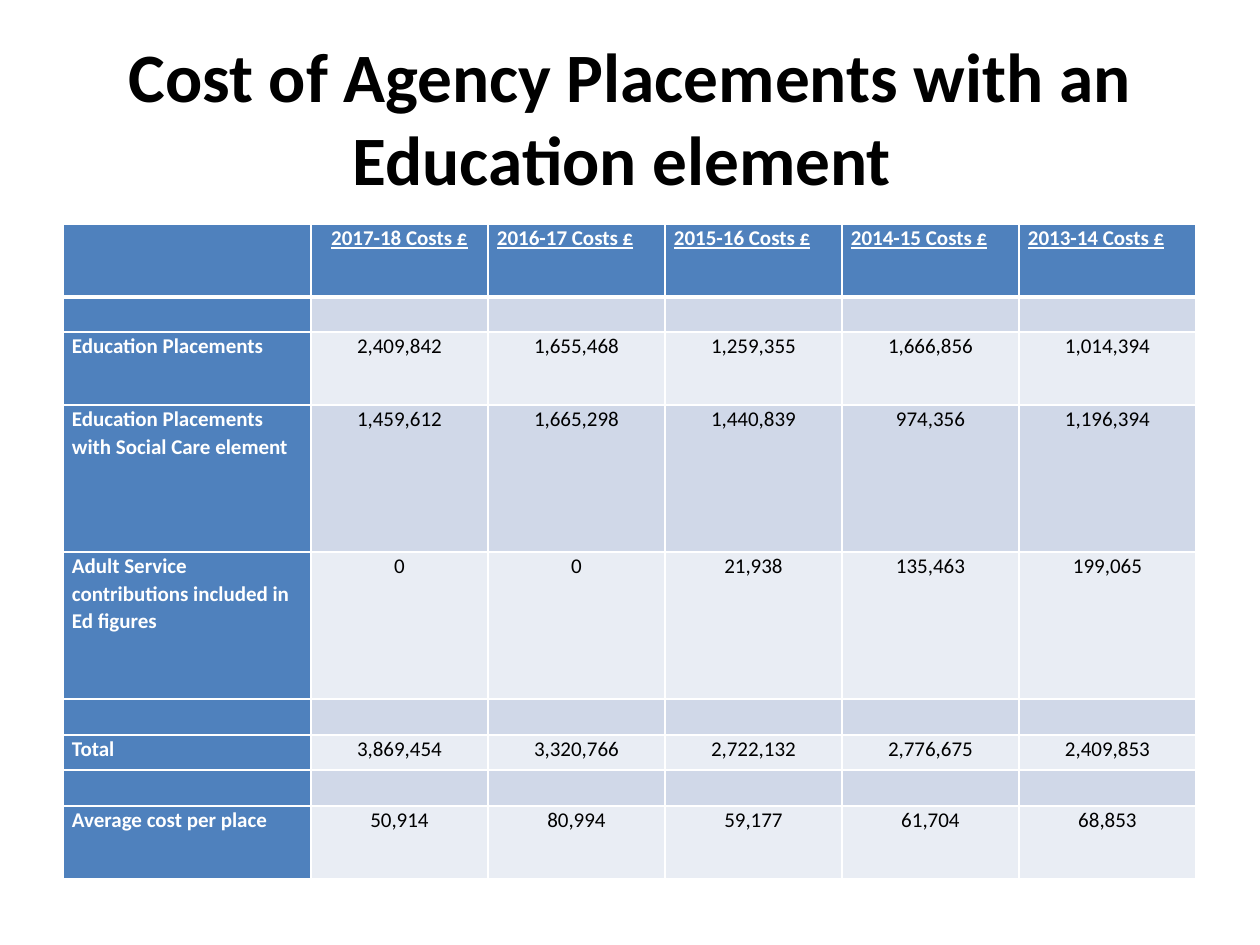
from dataclasses import dataclass

from lxml import etree
from pptx import Presentation
from pptx import util as u
from pptx.dml.color import RGBColor
from pptx.enum import text
from pptx.oxml.ns import qn


@dataclass
class Theme:
    font: str = "Calibri"
    title_size: float = 39.6
    cell_size: int = 12
    accent: str = "4F81BD"
    dark_band: str = "D0D8E8"
    light_band: str = "E9EDF4"
    white: str = "FFFFFF"
    black: str = "000000"


theme = Theme()
PX = u.Inches(1) / 126


def px(length):
    return u.Emu(round(length * PX))


def add_span(para, words, size, color, bold):
    span = para.add_run()
    span.text = words
    span.font.name = theme.font
    span.font.size = u.Pt(size)
    span.font.bold = bold
    span.font.color.rgb = RGBColor.from_string(color)
    return span


deck = Presentation()
deck.slide_width, deck.slide_height = px(1260), px(945)
page = deck.slides.add_slide(deck.slide_layouts[5])

# Title
title = page.shapes.title
title.left, title.top, title.width, title.height = px(63), px(38), px(1134), px(157)
frame = title.text_frame
frame.word_wrap = True
frame.auto_size = text.MSO_AUTO_SIZE.NONE
frame.vertical_anchor = text.MSO_ANCHOR.MIDDLE
para = frame.paragraphs[0]
para.alignment = text.PP_ALIGN.CENTER
add_span(para, "Cost of Agency Placements with an Education element ",
         theme.title_size, theme.black, True)

# Table contents: blank rows separate the groups
blank = [""] * 6
rows = [
    ["", "2017-18 Costs £", "2016-17 Costs £", "2015-16 Costs £", "2014-15 Costs £", "2013-14 Costs £"],
    blank,
    ["Education Placements", "2,409,842", "1,655,468", "1,259,355", "1,666,856", "1,014,394"],
    ["Education Placements with Social Care element",
     "1,459,612", "1,665,298", "1,440,839", "974,356", "1,196,394"],
    ["Adult Service contributions included in Ed figures",
     "0", "0", "21,938", "135,463", "199,065"],
    blank,
    ["Total", "3,869,454", "3,320,766", "2,722,132", "2,776,675", "2,409,853"],
    blank,
    ["Average cost per place", "50,914", "80,994", "59,177", "61,704", "68,853"],
]
widths = [248] + [177] * 5
heights = [73, 35, 73, 147, 147, 36, 35, 36, 73]

# Table grid
holder = page.shapes.add_table(len(rows), len(widths), px(63), px(224),
                               px(sum(widths)), px(sum(heights)))
table = holder.table
for column, width in zip(table.columns, widths):
    column.width = px(width)
for row, height in zip(table.rows, heights):
    row.height = px(height)

# Cells
for r, values in enumerate(rows):
    for c, value in enumerate(values):
        cell = table.cell(r, c)
        heading = r == 0 or c == 0
        band = theme.dark_band if r % 2 else theme.light_band
        cell.fill.solid()
        cell.fill.fore_color.rgb = RGBColor.from_string(theme.accent if heading else band)
        cell.margin_left = cell.margin_right = px(9)
        cell.margin_top = cell.margin_bottom = 0

        para = cell.text_frame.paragraphs[0]
        para.line_spacing = 1.07
        left_aligned = c == 0 or (r == 0 and c > 1)
        para.alignment = text.PP_ALIGN.LEFT if left_aligned else text.PP_ALIGN.CENTER
        if value:
            span = add_span(para, value, theme.cell_size,
                            theme.white if heading else theme.black, heading)
            span.font.underline = r == 0
        else:
            # Keeps an empty cell from growing its row
            end = etree.SubElement(para._p, qn("a:endParaRPr"))
            end.set("sz", str(theme.cell_size * 100))

        # White borders, heavier below the header row
        props = cell._tc.get_or_add_tcPr()
        for place, side in enumerate("LRTB"):
            heavy = (r, side) in ((0, "B"), (1, "T"))
            line = etree.Element(qn(f"a:ln{side}"), w=str(u.Pt(3 if heavy else 1)))
            fill = etree.SubElement(line, qn("a:solidFill"))
            etree.SubElement(fill, qn("a:srgbClr"), val=theme.white)
            props.insert(place, line)

deck.save("out.pptx")
